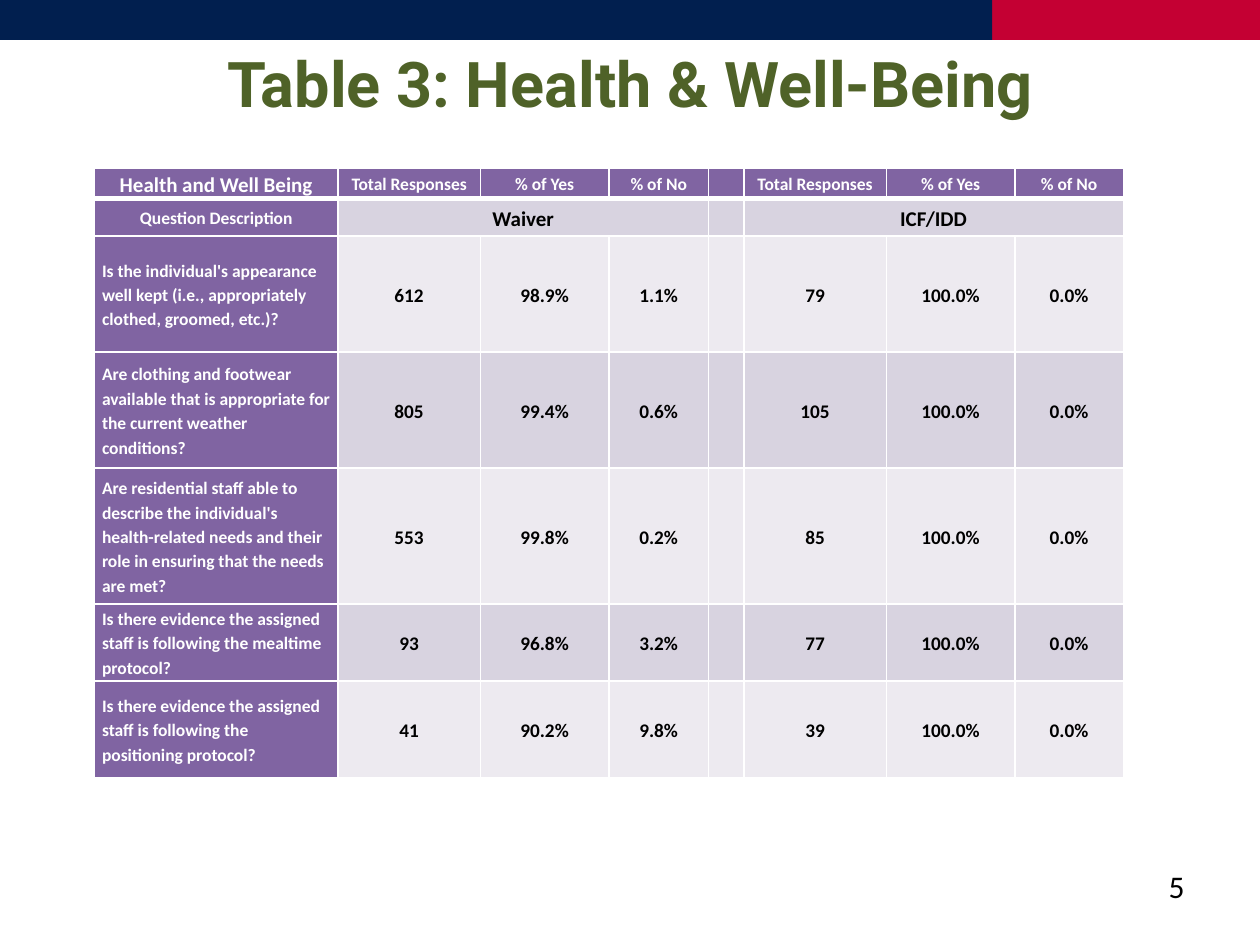
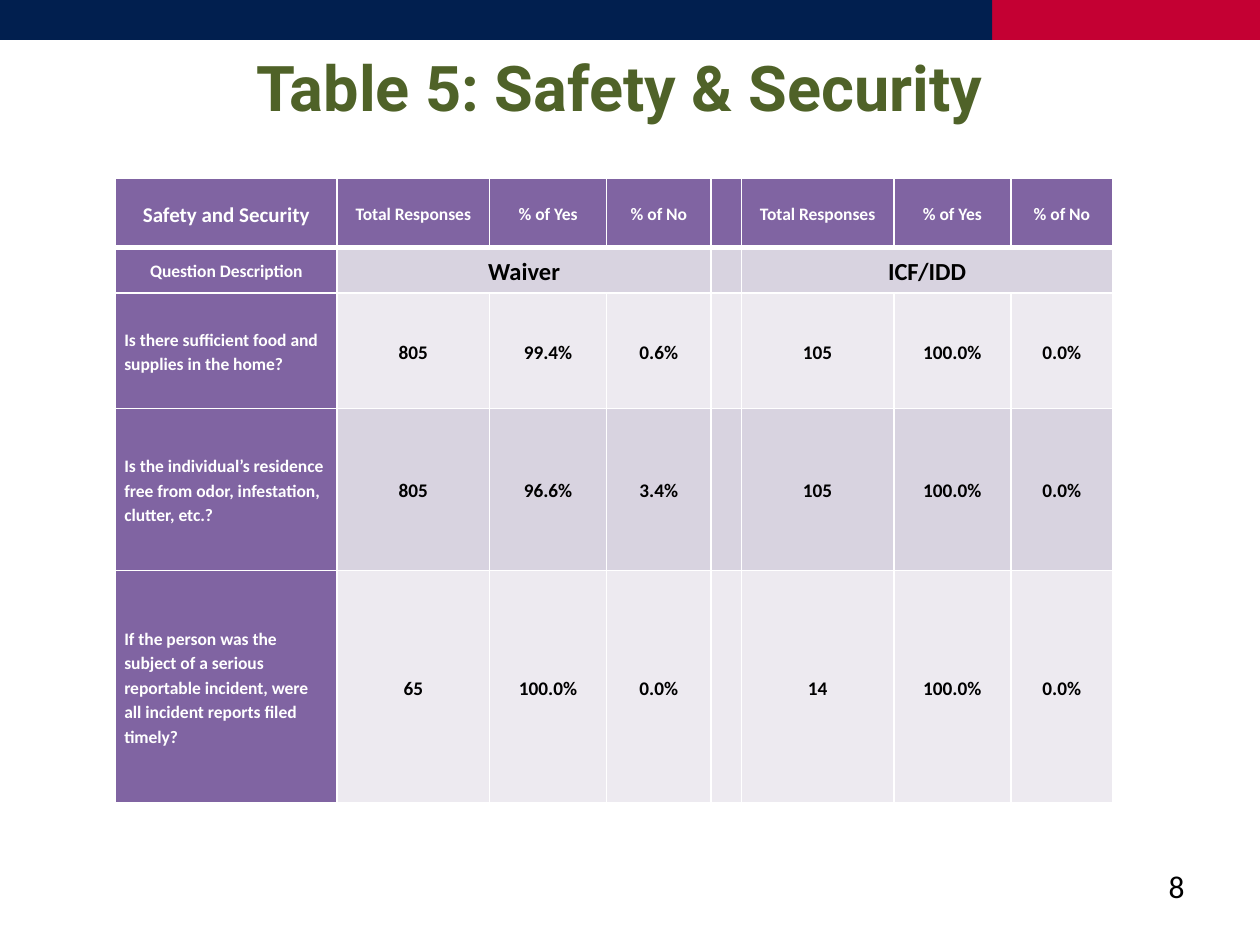
import lxml.etree
import pptx
import pptx.dml.color
import pptx.enum.shapes
import pptx.enum.text
import pptx.oxml.ns
import pptx.util

RGBColor = pptx.dml.color.RGBColor
NAVY = RGBColor(0x01, 0x1F, 0x4F)
RED = RGBColor(0xC4, 0x00, 0x33)
OLIVE = RGBColor(0x4F, 0x62, 0x28)
PURPLE = RGBColor(0x80, 0x64, 0xA2)
LILAC = RGBColor(0xD8, 0xD3, 0xE0)
PALE = RGBColor(0xED, 0xEA, 0xF0)
WHITE = RGBColor(0xFF, 0xFF, 0xFF)
BLACK = RGBColor(0x00, 0x00, 0x00)

TITLE_FONT, BODY_FONT = "Roboto", "Calibri"
PP_ALIGN = pptx.enum.text.PP_ALIGN
ANCHOR = pptx.enum.text.MSO_ANCHOR
qn = pptx.oxml.ns.qn

# The slide is a grid of 12 square columns by 9 rows; boxes are in grid units.
SLIDE_W, SLIDE_H = pptx.util.Inches(10), pptx.util.Inches(7.5)
UNIT = SLIDE_W / 12
BAND_HEIGHT, BAND_SPLIT = 0.38, 9.45
NUMBER_BOX = (8.6, 8.2, 2.8, 0.6)

MEASURES = ["Total Responses", "% of Yes", "% of No"]
GAP = 4  # column between the two programs

HEALTH = {
    "title": "Table 3: Health & Well-Being",
    "title_box": (0.6, 0.36, 10.8, 1.24),
    "number": "5",
    "topic": "Health and Well Being",
    "table_box": (0.9, 1.6, 9.8, 5.81),
    "columns": [1.93, 1.13, 1.02, 0.79, 0.28, 1.13, 1.02, 0.86],
    "rows": [0.24, 0.3, 0.92, 0.92, 1.08, 0.61, 0.77],
    "inset": 0.06,
    "program_size": 12,
    "answers": [
        ("Is the individual's appearance well kept (i.e., appropriately clothed, groomed, etc.)?",
         "612", "98.9%", "1.1%", "", "79", "100.0%", "0.0%"),
        ("Are clothing and footwear available that is appropriate for the current weather conditions?",
         "805", "99.4%", "0.6%", "", "105", "100.0%", "0.0%"),
        ("Are residential staff able to describe the individual's health-related needs and their role "
         "in ensuring that the needs are met?",
         "553", "99.8%", "0.2%", "", "85", "100.0%", "0.0%"),
        ("Is there evidence the assigned staff is following the mealtime protocol?",
         "93", "96.8%", "3.2%", "", "77", "100.0%", "0.0%"),
        ("Is there evidence the assigned staff is following the positioning protocol?",
         "41", "90.2%", "9.8%", "", "39", "100.0%", "0.0%"),
    ],
}

SAFETY = {
    "title": "Table 5: Safety & Security",
    "title_box": (0.5, 0.4, 10.8, 1.1),
    "number": "8",
    "topic": "Safety and Security",
    "table_box": (1.1, 1.7, 9.5, 5.95),
    "columns": [1.76, 1.21, 0.93, 0.83, 0.24, 1.21, 0.93, 0.81],
    "rows": [0.55, 0.36, 0.92, 1.29, 1.85],
    "inset": 0.07,
    "program_size": 14,
    "answers": [
        ("Is there sufficient food and supplies in the home?",
         "805", "99.4%", "0.6%", "", "105", "100.0%", "0.0%"),
        ("Is the individual’s residence free from odor, infestation, clutter, etc.?",
         "805", "96.6%", "3.4%", "", "105", "100.0%", "0.0%"),
        ("If the person was the subject of a serious reportable incident, were all incident reports "
         "filed timely?",
         "65", "100.0%", "0.0%", "", "14", "100.0%", "0.0%"),
    ],
}


def emu(box):
    """Turn a box in grid units into slide lengths."""
    return [round(v * UNIT) for v in box]


def format_text(p, font, size, color, bold=False, align=PP_ALIGN.CENTER):
    p.alignment = align
    for r in p.runs:
        r.font.name, r.font.size, r.font.bold = font, pptx.util.Pt(size), bold
        r.font.color.rgb = color


def add_bands(slide):
    for left, right, color in ((BAND_SPLIT, 12, RED), (0, BAND_SPLIT, NAVY)):
        sp = slide.shapes.add_shape(pptx.enum.shapes.MSO_SHAPE.RECTANGLE,
                                    *emu((left, 0, right - left, BAND_HEIGHT)))
        sp.shadow.inherit = False
        sp.fill.solid()
        sp.fill.fore_color.rgb = color
        sp.line.fill.background()


def place_title(slide, text, box):
    sp = slide.shapes.title
    sp.left, sp.top, sp.width, sp.height = emu(box)
    tf = sp.text_frame
    tf.text = text
    tf.vertical_anchor = ANCHOR.TOP
    format_text(tf.paragraphs[0], TITLE_FONT, 36, OLIVE, bold=True)


def add_number(slide, text):
    tf = slide.shapes.add_textbox(*emu(NUMBER_BOX)).text_frame
    tf.word_wrap = True
    tf.text = text
    format_text(tf.paragraphs[0], BODY_FONT, 18, BLACK, align=PP_ALIGN.RIGHT)


def add_borders(cell, bottom):
    """Rule the cell in white, 1 pt wide except for the bottom edge."""
    tc_pr = cell._tc.get_or_add_tcPr()
    for i, side in enumerate(("lnL", "lnR", "lnT", "lnB")):
        width = pptx.util.Pt(bottom if side == "lnB" else 1)
        ln = lxml.etree.Element(qn(f"a:{side}"), w=str(width))
        fill = lxml.etree.SubElement(ln, qn("a:solidFill"))
        lxml.etree.SubElement(fill, qn("a:srgbClr"), val=str(WHITE))
        tc_pr.insert(i, ln)


def cell_style(row, col, program_size):
    """Return fill, text size, text colour, alignment and space after."""
    if row == 0:
        return PURPLE, 10 if col else 12, WHITE, PP_ALIGN.CENTER, 0
    if col == 0:
        return PURPLE, 10, WHITE, PP_ALIGN.CENTER if row == 1 else PP_ALIGN.LEFT, 0
    if row == 1:
        return LILAC, program_size, BLACK, PP_ALIGN.CENTER, 0
    return LILAC if row % 2 else PALE, 11, BLACK, PP_ALIGN.CENTER, 10


def fill_cell(cell, text, inset, style, bottom):
    fill, size, color, align, after = style
    cell.fill.solid()
    cell.fill.fore_color.rgb = fill
    add_borders(cell, bottom)
    cell.vertical_anchor = ANCHOR.MIDDLE
    cell.margin_left = cell.margin_right = pptx.util.Inches(inset)
    cell.margin_top = cell.margin_bottom = 0
    p = cell.text_frame.paragraphs[0]
    if not text:
        lxml.etree.SubElement(p._p, qn("a:endParaRPr"), sz="1000")
        return
    p.text = text
    p.line_spacing = 1.15
    if after:
        p.space_after = pptx.util.Pt(after)
    format_text(p, BODY_FONT, size, color, bold=True, align=align)


def add_survey_table(slide, survey):
    grid = [[survey["topic"], *MEASURES, "", *MEASURES],
            ["Question Description", "Waiver", "", "", "", "ICF/IDD", "", ""],
            *survey["answers"]]
    columns, rows = survey["columns"], survey["rows"]
    left, top, width, height = emu(survey["table_box"])
    table = slide.shapes.add_table(len(rows), len(columns), left, top, width, height).table
    for column, share in zip(table.columns, columns):
        column.width = round(width * share / sum(columns))
    for row, share in zip(table.rows, rows):
        row.height = round(height * share / sum(rows))
    for first in (1, GAP + 1):
        table.cell(1, first).merge(table.cell(1, first + 2))
    for i, texts in enumerate(grid):
        for j, text in enumerate(texts):
            fill_cell(table.cell(i, j), text, survey["inset"],
                      cell_style(i, j, survey["program_size"]), bottom=1 if i else 3)
            if i == 1:
                # The heavy rule is shared with the header row above.
                table.cell(i, j)._tc.tcPr.find(qn("a:lnT")).set("w", str(pptx.util.Pt(3)))


def add_survey_slide(prs, survey):
    slide = prs.slides.add_slide(prs.slide_layouts[5])
    add_bands(slide)
    place_title(slide, survey["title"], survey["title_box"])
    add_number(slide, survey["number"])
    add_survey_table(slide, survey)


def main():
    prs = pptx.Presentation()
    prs.slide_width, prs.slide_height = SLIDE_W, SLIDE_H
    for survey in (HEALTH, SAFETY):
        add_survey_slide(prs, survey)
    prs.save("out.pptx")


if __name__ == "__main__":
    main()
